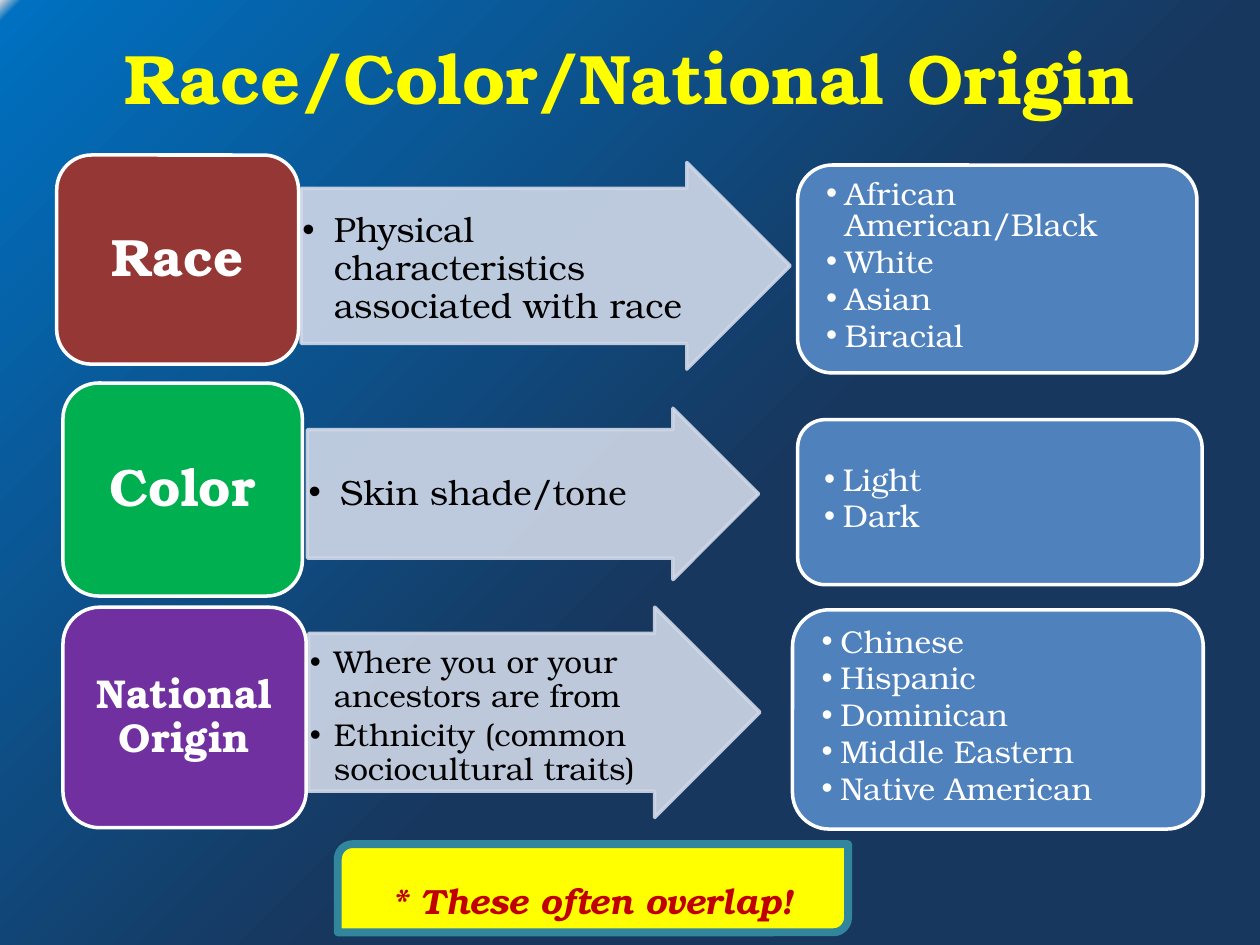
from copy import deepcopy
from dataclasses import dataclass

from lxml.etree import SubElement
from pptx import Presentation
from pptx.dml.color import RGBColor
from pptx.enum.shapes import MSO_SHAPE
from pptx.enum.text import MSO_ANCHOR, PP_ALIGN
from pptx.oxml.ns import qn
from pptx.util import Pt

FONT = "TeX Gyre Bonum"
NAVY = RGBColor(0x17, 0x37, 0x5E)
BLUE = RGBColor(0x00, 0x70, 0xC0)
GREY = RGBColor(0xD9, 0xD9, 0xD9)
YELLOW = RGBColor(0xFF, 0xFF, 0x00)
WHITE = RGBColor(0xFF, 0xFF, 0xFF)
BLACK = RGBColor(0x00, 0x00, 0x00)
MAROON = RGBColor(0x95, 0x37, 0x35)
GREEN = RGBColor(0x00, 0xB0, 0x50)
PURPLE = RGBColor(0x70, 0x30, 0xA0)
PALE = RGBColor(0xD0, 0xD8, 0xE8)
PANEL = RGBColor(0x4F, 0x81, 0xBD)
TEAL = RGBColor(0x31, 0x85, 0x9C)
RED = RGBColor(0xC0, 0x00, 0x00)

Box = tuple[float, float, float, float]  # left, top, width, height in points


@dataclass
class Category:
    name: str
    color: RGBColor
    label_size: float
    label_box: Box
    meaning: list[str]
    meaning_size: float
    meaning_indent: float
    arrow_box: Box
    meaning_box: Box
    examples: list[str]
    panel_box: Box


CATEGORIES = [
    Category("Race", MAROON, 30, (32.4, 88.6, 138.2, 119.5),
             ["Physical characteristics associated with race"], 20, 18,
             (172.1, 92.9, 279.4, 118.1), (172.1, 120.6, 235.4, 75.3),
             ["African American/Black", "White", "Asian", "Biracial"],
             (455.8, 94.3, 228.2, 118.8)),
    Category("Color", GREEN, 30, (36, 218.9, 136.8, 121.7),
             ["Skin shade/tone"], 20, 18,
             (175.7, 233.3, 257.8, 97.9), (175.7, 270.8, 221, 48.1),
             ["Light", "Dark"],
             (455.8, 239.8, 231.1, 94.3)),
    Category("National Origin", PURPLE, 23, (36, 347, 139, 126),
             ["Where you or your ancestors are from",
              "Ethnicity (common sociocultural traits)"], 18, 13.7,
             (176.4, 347, 257.8, 120.2), (176.4, 368.5, 212.4, 84.4),
             ["Chinese", "Hispanic", "Dominican", "Middle Eastern",
              "Native American"],
             (452.9, 348.5, 234.7, 125.3)),
]


def add_shape(s, kind, box: Box, fill: RGBColor, line: RGBColor, width=2, alpha=None):
    sp = s.shapes.add_shape(kind, *map(Pt, box))
    sp.shadow.inherit = False
    sp.fill.solid()
    sp.fill.fore_color.rgb = fill
    sp.line.color.rgb = line
    sp.line.width = Pt(width)
    if alpha is not None:
        for clr in sp._element.spPr.iter(qn("a:srgbClr")):
            SubElement(clr, qn("a:alpha"), val=str(alpha * 1000))
    return sp


def add_textbox(s, box: Box):
    return s.shapes.add_textbox(*map(Pt, box))


def write(sp, lines: list[str], *, size, color, bold=False, italic=False,
          align=PP_ALIGN.LEFT, anchor=MSO_ANCHOR.MIDDLE, margins=(7.2, 3.6, 7.2, 3.6),
          spacing=None, after=0, indent=None) -> None:
    tf = sp.text_frame
    tf.word_wrap = True
    tf.vertical_anchor = anchor
    tf.margin_left, tf.margin_top, tf.margin_right, tf.margin_bottom = map(Pt, margins)
    for i, text in enumerate(lines):
        p = tf.add_paragraph() if i else tf.paragraphs[0]
        p.alignment = align
        if indent is not None:
            pPr = p._p.get_or_add_pPr()
            pPr.set("marL", str(Pt(indent)))
            pPr.set("indent", str(-Pt(indent)))
            SubElement(pPr, qn("a:buFont"), typeface="Arial")
            SubElement(pPr, qn("a:buChar"), char="•")
        p.line_spacing = spacing
        p.space_after = Pt(after)
        r = p.add_run()
        r.text = text
        r.font.name, r.font.size = FONT, Pt(size)
        r.font.bold, r.font.italic = bold, italic
        r.font.color.rgb = color


def set_background(s) -> None:
    fill = s.background.fill
    fill.gradient()
    fill.gradient_angle = 135
    stops = s._element.find(".//" + qn("a:gsLst"))
    stops.append(deepcopy(stops[-1]))
    for stop, (position, color) in zip(
            fill.gradient_stops, [(0.43, NAVY), (0.99, BLUE), (1, GREY)]):
        stop.position = position
        stop.color.rgb = color


def add_category(s, c: Category) -> None:
    # Arrow with the meaning
    arrow = add_shape(s, MSO_SHAPE.RIGHT_ARROW, c.arrow_box, PALE, PALE, alpha=90)
    arrow.adjustments[0] = 0.75
    write(add_textbox(s, c.meaning_box), c.meaning, size=c.meaning_size, color=BLACK,
          anchor=MSO_ANCHOR.TOP, margins=(0.7, 0.7, 0.7, 0.7), spacing=0.9, after=3,
          indent=c.meaning_indent)
    # Category label
    label = add_shape(s, MSO_SHAPE.ROUNDED_RECTANGLE, c.label_box, c.color, WHITE)
    write(label, [c.name], size=c.label_size, color=WHITE, bold=True,
          align=PP_ALIGN.CENTER, spacing=0.9)
    # Panel of examples
    panel = add_shape(s, MSO_SHAPE.ROUNDED_RECTANGLE, c.panel_box, PANEL, WHITE)
    write(panel, c.examples, size=18, color=WHITE, margins=(10.5, 3.6, 7.2, 6),
          spacing=Pt(18), after=3, indent=10.8)


def main() -> None:
    prs = Presentation()
    prs.slide_width, prs.slide_height = Pt(720), Pt(540)
    s = prs.slides.add_slide(prs.slide_layouts[6])
    set_background(s)

    # Title
    write(add_textbox(s, (36, -1.4, 648, 90)), ["Race/Color/National Origin"],
          size=40, color=YELLOW, bold=True, align=PP_ALIGN.CENTER)

    # Rows
    for category in CATEGORIES:
        add_category(s, category)

    # Closing note
    note = add_shape(s, MSO_SHAPE.ROUND_2_DIAG_RECTANGLE, (193, 482.4, 291.6, 50.4),
                     YELLOW, TEAL, width=4.5)
    write(note, ["* These often overlap!"], size=20, color=RED, bold=True, italic=True,
          align=PP_ALIGN.CENTER, margins=(14.4, 14.4, 14.4, 0))

    prs.save("out.pptx")


if __name__ == "__main__":
    main()
